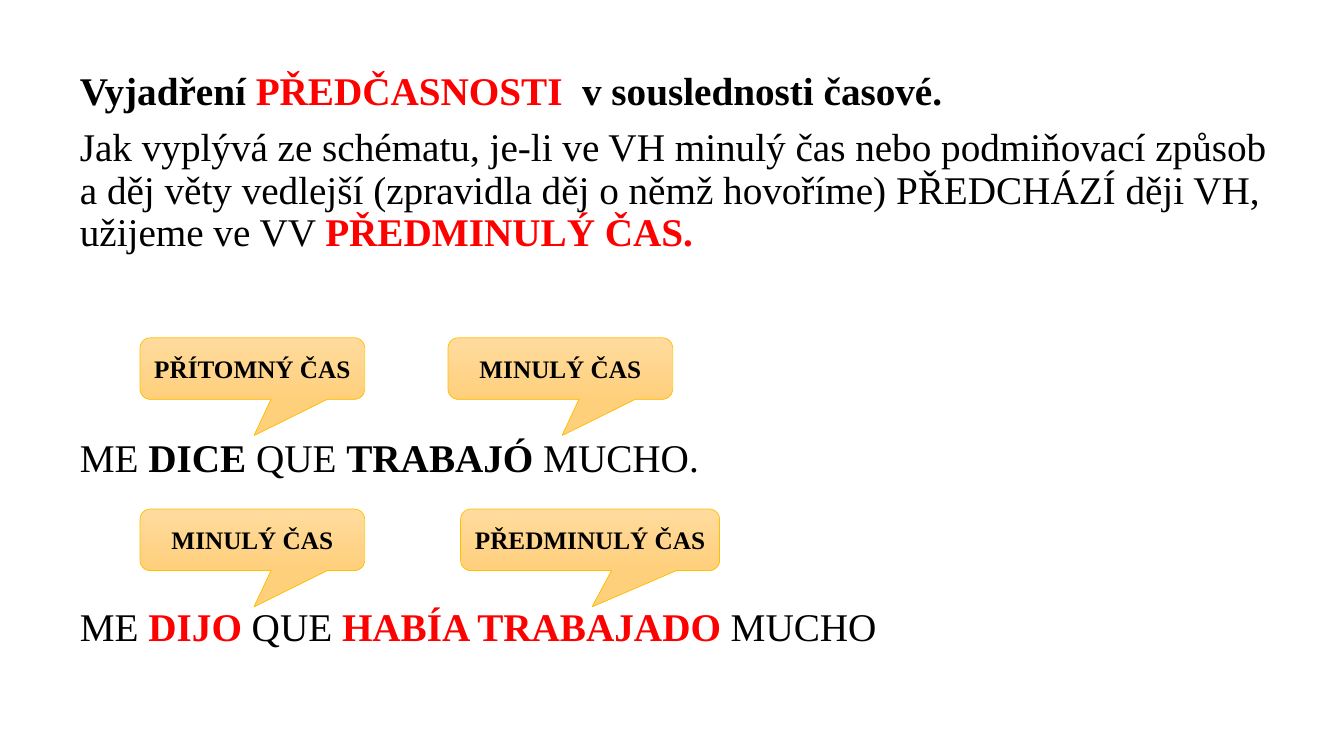
from pptx import Presentation
from pptx.dml.color import RGBColor
from pptx.enum.shapes import MSO_SHAPE
from pptx.enum.text import MSO_ANCHOR, PP_ALIGN
from pptx.util import Inches, Pt

CALLOUT = MSO_SHAPE.ROUNDED_RECTANGULAR_CALLOUT
MIDDLE = MSO_ANCHOR.MIDDLE
CENTER = PP_ALIGN.CENTER

WIDTH, HEIGHT = Inches(13.33), Inches(7.5)
GRID = 96  # columns and rows on the slide
FONT = "Times New Roman"
BLACK, RED, GOLD = "000000", "FF0000", "FFC000"
CALLOUT_SHADES = ("FFDB9E", "FFD07C")
CALLOUT_POINTER = (0.008, 1.09, 0.167)

# Each paragraph: space before in points, then spans of (text, colour, bold)
PARAGRAPHS = [
    (10, [("Vyjadření ", BLACK, True), ("PŘEDČASNOSTI", RED, True),
          ("  v souslednosti časové.", BLACK, True)]),
    (10, [("Jak vyplývá ze schématu, je-li ve VH minulý čas nebo podmiňovací "
           "způsob a děj věty vedlejší (zpravidla děj o němž hovoříme) "
           "PŘEDCHÁZÍ ději VH, užijeme ve VV ", BLACK, False),
          ("PŘEDMINULÝ ČAS.", RED, True)]),
    (131, [("ME ", BLACK, False), ("DICE", BLACK, True),
           (" QUE ", BLACK, False), ("TRABAJÓ", BLACK, True),
           (" MUCHO.", BLACK, False)]),
    (90.5, [("ME ", BLACK, False), ("DIJO", RED, True),
            (" QUE ", BLACK, False), ("HABÍA TRABAJADO ", RED, True),
            ("MUCHO", BLACK, False)]),
]

# Each callout: text, column, row, columns wide
CALLOUTS = [
    ("PŘÍTOMNÝ ČAS", 10, 42.9, 16.05),
    ("MINULÝ ČAS", 32, 42.9, 16.05),
    ("MINULÝ ČAS", 10, 64.65, 16.05),
    ("PŘEDMINULÝ ČAS", 32.9, 64.65, 18.5),
]
CALLOUT_ROWS = 7.8


def color(value):
    return RGBColor.from_string(value)


def place(column, row, columns, rows):
    """Turn grid units into left, top, width and height."""
    return (int(WIDTH * column / GRID), int(HEIGHT * row / GRID),
            int(WIDTH * columns / GRID), int(HEIGHT * rows / GRID))


def set_font(font, size, bold=None):
    font.name, font.size, font.bold = FONT, Pt(size), bold


def add_body(page, paragraphs, area):
    frame = page.shapes.add_textbox(*place(*area)).text_frame
    frame.word_wrap = True
    for index, (space, spans) in enumerate(paragraphs):
        para = frame.add_paragraph() if index else frame.paragraphs[0]
        para.line_spacing = 0.9
        para.space_before = Pt(space)
        set_font(para.font, 28)
        for text, shade, bold in spans:
            span = para.add_run()
            span.text = text
            span.font.bold = bold
            span.font.color.rgb = color(shade)


def add_callout(page, text, column, row, columns):
    area = place(column, row, columns, CALLOUT_ROWS)
    box = page.shapes.add_shape(CALLOUT, *area)
    box.shadow.inherit = False
    for index, value in enumerate(CALLOUT_POINTER):
        box.adjustments[index] = value
    # Vertical gradient, light at the top
    box.fill.gradient()
    box.fill.gradient_angle = 270
    for stop, shade, position in zip(box.fill.gradient_stops, CALLOUT_SHADES, (0, 1)):
        stop.color.rgb = color(shade)
        stop.position = position
    box.line.color.rgb = color(GOLD)
    box.line.width = Pt(0.5)
    # Label
    frame = box.text_frame
    frame.word_wrap = True
    frame.vertical_anchor = MIDDLE
    para = frame.paragraphs[0]
    para.text = text
    para.alignment = CENTER
    set_font(para.font, 18, True)
    para.font.color.rgb = color(BLACK)


def main():
    deck = Presentation()
    deck.slide_width, deck.slide_height = WIDTH, HEIGHT
    page = deck.slides.add_slide(deck.slide_layouts[6])
    add_body(page, PARAGRAPHS, (5, 8.45, 88, 80.25))
    for callout in CALLOUTS:
        add_callout(page, *callout)
    deck.save("out.pptx")


if __name__ == "__main__":
    main()
